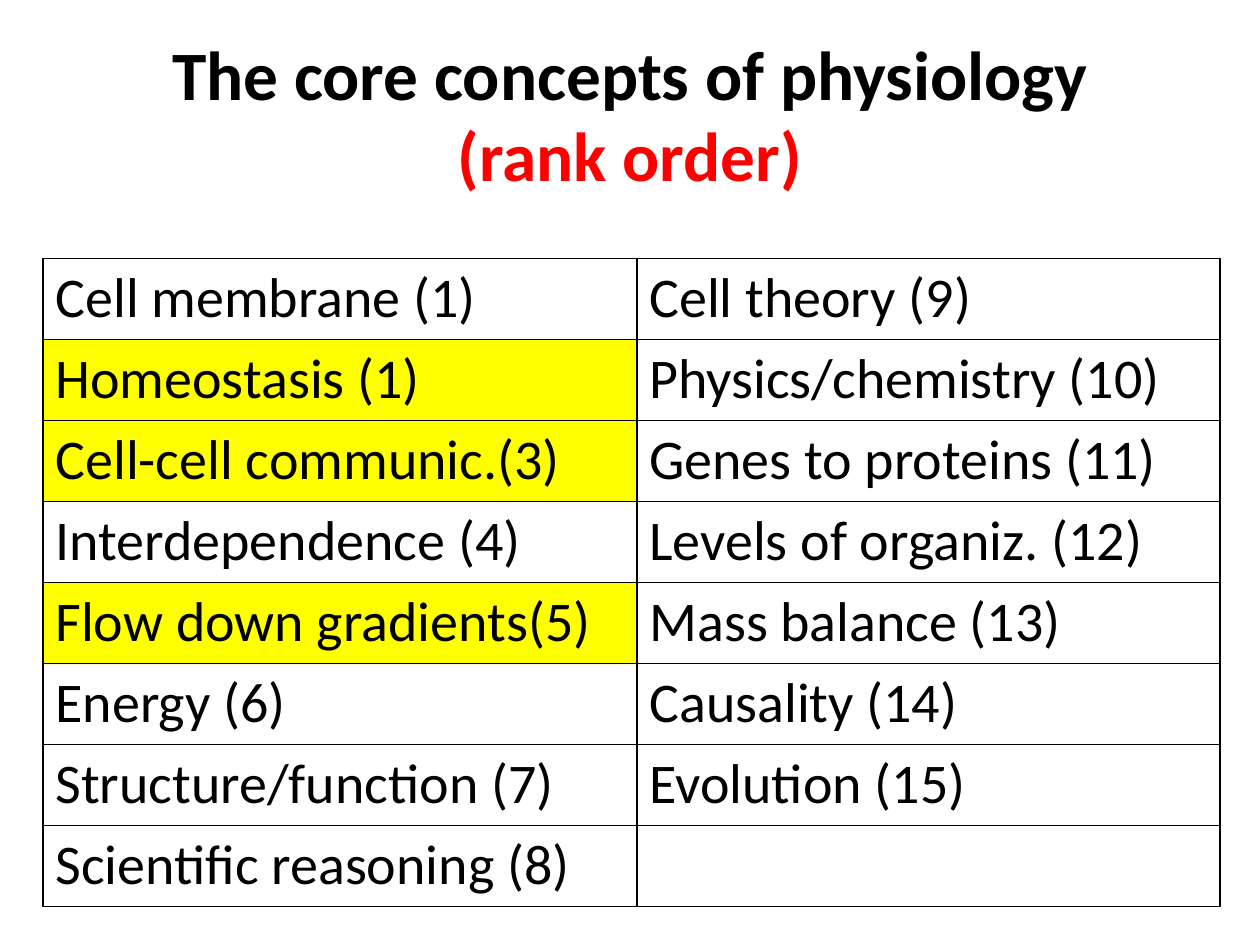
from lxml import etree
from pptx import Presentation
from pptx.dml.color import RGBColor
from pptx.enum.text import MSO_ANCHOR, PP_ALIGN
from pptx.oxml.ns import qn
from pptx.util import Pt

BLACK = RGBColor(0, 0, 0)
RED = RGBColor(255, 0, 0)
YELLOW = RGBColor(255, 255, 0)
CENTER = PP_ALIGN.CENTER
MIDDLE = MSO_ANCHOR.MIDDLE

CONCEPTS = [
    ("Cell membrane (1)", "Cell theory (9)"),
    ("Homeostasis (1)", "Physics/chemistry (10)"),
    ("Cell-cell communic.(3)", "Genes to proteins (11)"),
    ("Interdependence (4)", "Levels of organiz. (12)"),
    ("Flow down gradients(5)", "Mass balance (13)"),
    ("Energy (6)", "Causality (14)"),
    ("Structure/function (7)", "Evolution (15)"),
    ("Scientific reasoning (8)", ""),
]
HIGHLIGHTED = {"Homeostasis (1)", "Cell-cell communic.(3)", "Flow down gradients(5)"}


class Deck:
    font = "Calibri"
    title_size = 39.6
    cell_size = 32
    border = 1

    def __init__(self, prs):
        self.s = prs.slides.add_slide(prs.slide_layouts[6])

    def set_font(self, p, size, bold=False):
        p.font.name = self.font
        p.font.size = Pt(size)
        p.font.bold = bold
        p.font.color.rgb = BLACK

    def title(self, left, top, width, height, lines):
        tf = self.s.shapes.add_textbox(Pt(left), Pt(top), Pt(width), Pt(height)).text_frame
        tf.word_wrap = True
        tf.vertical_anchor = MIDDLE
        p = tf.paragraphs[0]
        p.alignment = CENTER
        p.line_spacing = 0.97
        self.set_font(p, self.title_size, True)
        for i, (text, color) in enumerate(lines):
            if i:
                p.add_line_break()
            r = p.add_run()
            r.text = text
            r.font.color.rgb = color

    def outline(self, cell):
        tc_pr = cell._tc.get_or_add_tcPr()
        for side in ("a:lnL", "a:lnR", "a:lnT", "a:lnB"):
            ln = etree.SubElement(tc_pr, qn(side), w=str(Pt(self.border)))
            fill = etree.SubElement(ln, qn("a:solidFill"))
            etree.SubElement(fill, qn("a:srgbClr"), val=str(BLACK))

    def table(self, left, top, widths, row_height, rows, highlighted):
        table = self.s.shapes.add_table(
            len(rows), len(widths), Pt(left), Pt(top),
            Pt(sum(widths)), Pt(row_height * len(rows))).table
        table.first_row = False
        table.horz_banding = False
        for column, width in zip(table.columns, widths):
            column.width = Pt(width)
        for row, texts in zip(table.rows, rows):
            row.height = Pt(row_height)
            for cell, text in zip(row.cells, texts):
                cell.text = text
                self.set_font(cell.text_frame.paragraphs[0], self.cell_size)
                self.outline(cell)
                if text in highlighted:
                    cell.fill.solid()
                    cell.fill.fore_color.rgb = YELLOW
                else:
                    cell.fill.background()


def main():
    prs = Presentation()
    prs.slide_width, prs.slide_height = Pt(720), Pt(540)
    deck = Deck(prs)
    deck.title(36, 21.6, 648, 90, [
        ("The core concepts of physiology", BLACK), ("(rank order)", RED)])
    deck.table(24.5, 147.6, (339.4, 333.4), 46.3, CONCEPTS, HIGHLIGHTED)
    prs.save("out.pptx")


if __name__ == "__main__":
    main()
